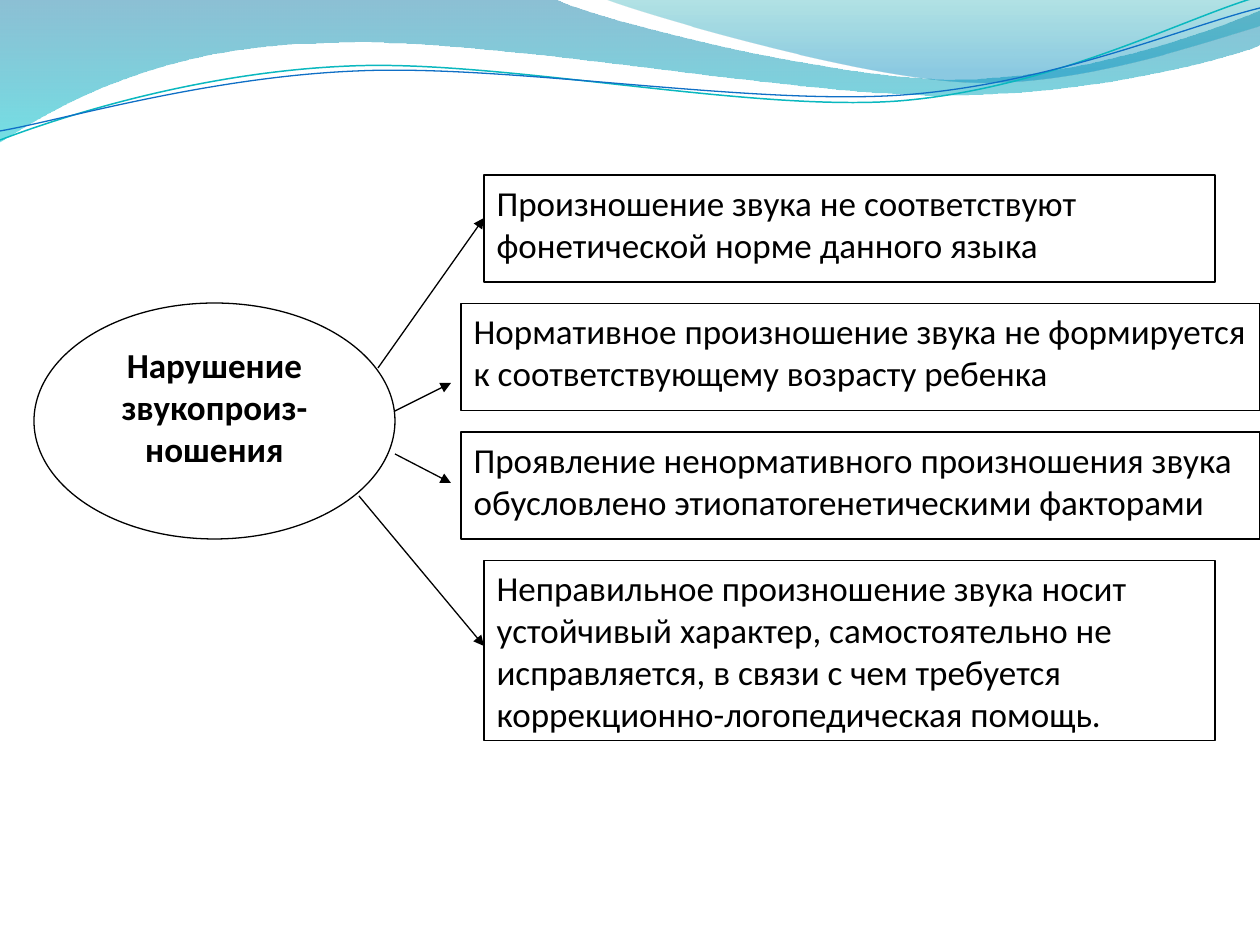
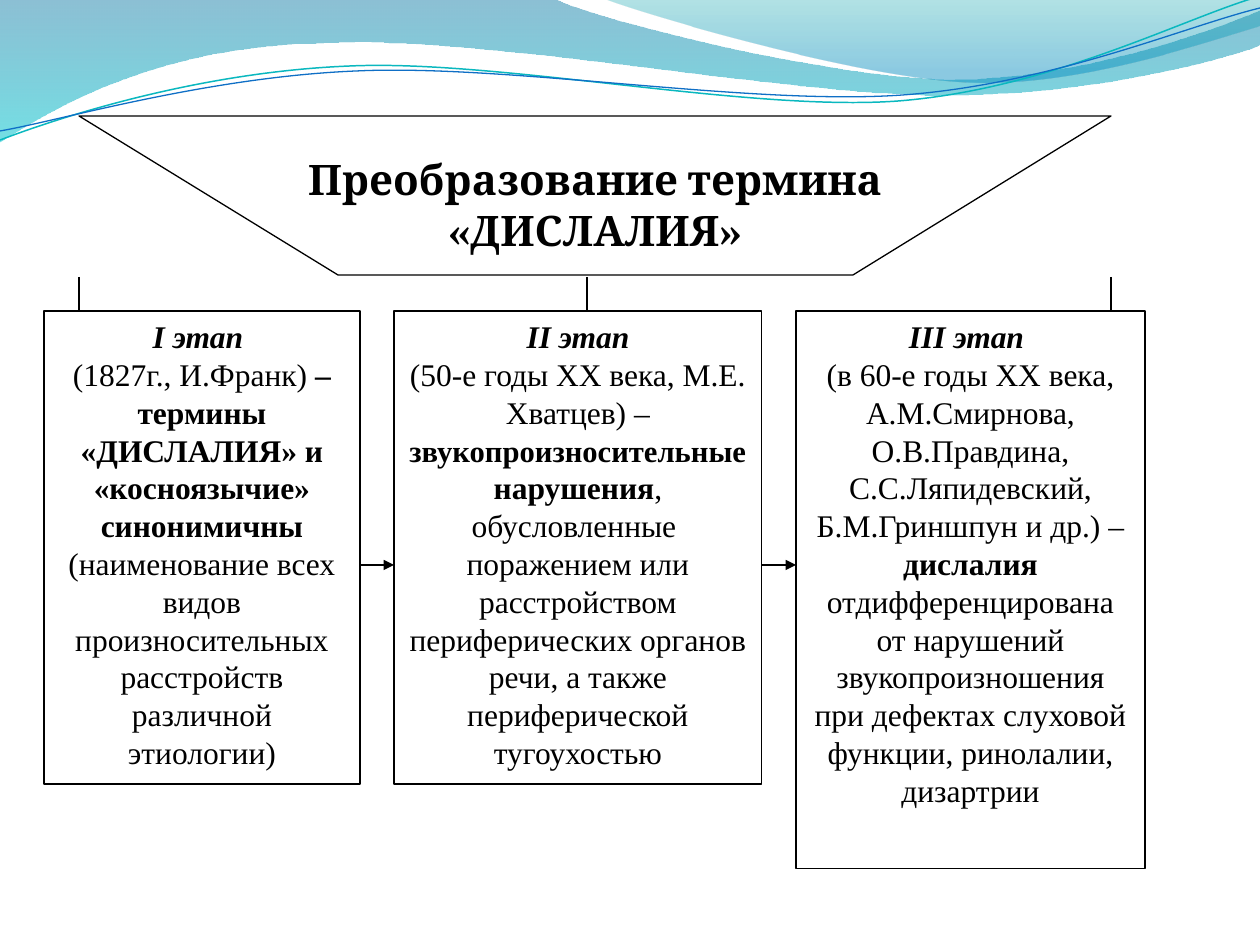
import lxml.etree
import pptx
import pptx.dml.color
import pptx.enum.shapes
import pptx.enum.text
import pptx.oxml.ns
import pptx.util

PX = 7257  # EMU per pixel, 126 pixels to the inch
BLACK = "000000"
WHITE = "FFFFFF"
SHAPES = pptx.enum.shapes.MSO_SHAPE
CENTER = pptx.enum.text.PP_ALIGN.CENTER
LEFT = pptx.enum.text.PP_ALIGN.LEFT
qn = pptx.oxml.ns.qn


def color(hex_string):
    return pptx.dml.color.RGBColor.from_string(hex_string)


def fill_box(shape, paragraphs, font, size, alignment, margins=(12.6, 6.3)):
    """White box with a thin black outline; a run is (text, style[, size])."""
    shape.shadow.inherit = False
    shape.fill.solid()
    shape.fill.fore_color.rgb = color(WHITE)
    shape.line.color.rgb = color(BLACK)
    shape.line.width = pptx.util.Pt(0.75)
    frame = shape.text_frame
    frame.word_wrap = True
    frame.vertical_anchor = pptx.enum.text.MSO_ANCHOR.TOP
    frame.margin_left = frame.margin_right = round(margins[0] * PX)
    frame.margin_top = round(margins[1] * PX)
    frame.margin_bottom = 6 * PX
    for index, runs in enumerate(paragraphs):
        paragraph = frame.paragraphs[0] if index == 0 else frame.add_paragraph()
        paragraph.alignment = alignment
        for text, style, *own_size in runs:
            run = paragraph.add_run()
            run.text = text
            run.font.name = font
            run.font.size = pptx.util.Pt(own_size[0] if own_size else size)
            run.font.bold = "b" in style
            run.font.italic = "i" in style
            run.font.color.rgb = color(BLACK)


presentation = pptx.Presentation()
presentation.slide_width = 1260 * PX
presentation.slide_height = 945 * PX
blank = presentation.slide_layouts[6]
causes_slide = presentation.slides.add_slide(blank)
stages_slide = presentation.slides.add_slide(blank)

# Shared header waves: two numbers make a line, six make a Bezier curve
waves = [
    {"start": (0, 0),
     "parts": [(554, -1), (600, 21, 837, 79, 955, 79), (1075, 79, 1207, 33, 1260, 11),
               (1261, 45), (1239, 55, 1096, 96, 940, 95), (784, 95, 481, 35, 324, 43),
               (163, 45, 58, 105, -1, 142)],
     "stops": [(0, "0074A1", 45), (1, "00C6CF", 55)]},
    {"start": (604, -1),
     "parts": [(641, 14, 859, 78, 969, 82), (1079, 87, 1211, 40, 1260, 26), (1260, 0)],
     "stops": [(0, "00A1A9", 30), (0.8, "008BBF", 45)]},
    {"start": (0, 140),
     "parts": [(60, 117, 199, 72, 349, 66), (498, 59, 747, 112, 898, 101),
               (1050, 89, 1182, 19, 1257, -3)],
     "line": ("0AB8BF", 0.85)},
    {"start": (0, 131),
     "parts": [(59, 121, 207, 77, 357, 71), (508, 64, 752, 106, 903, 95),
               (1053, 84, 1186, 26, 1260, 8)],
     "line": ("0F6FC6", 0.75)},
]

for slide in presentation.slides:
    for wave in waves:
        points = [pair for part in wave["parts"] for pair in zip(part[::2], part[1::2])]
        builder = slide.shapes.build_freeform(*wave["start"], scale=PX)
        builder.add_line_segments(points, close="stops" in wave)
        shape = builder.convert_to_shape()
        shape.shadow.inherit = False
        # Three line points in a row become one Bezier segment
        segments = iter(list(shape._element.spPr.iter(qn("a:lnTo"))))
        for part in wave["parts"]:
            first = next(segments)
            if len(part) == 6:
                first.tag = qn("a:cubicBezTo")
                for extra in (next(segments), next(segments)):
                    first.append(extra[0])
                    extra.getparent().remove(extra)
        if "stops" in wave:
            shape.line.fill.background()
            shape.fill.gradient()
            shape.fill.gradient_angle = 270
            for stop, (position, shade, opacity) in zip(shape.fill.gradient_stops, wave["stops"]):
                stop.position = position
                stop.color.rgb = color(shade)
            # Opacity of each gradient stop
            shades = shape._element.spPr.iter(qn("a:srgbClr"))
            for element, (position, shade, opacity) in zip(shades, wave["stops"]):
                lxml.etree.SubElement(element, qn("a:alpha"), val=str(opacity * 1000))
        else:
            shade, width = wave["line"]
            shape.fill.background()
            shape.line.color.rgb = color(shade)
            shape.line.width = pptx.util.Pt(width)

# Slide 1: the disorder and its four signs
disorder = causes_slide.shapes.add_shape(SHAPES.OVAL, 34 * PX, 303 * PX, 361 * PX, 236 * PX)
fill_box(disorder, [[("Нарушение", "b")], [("звукопроиз-ношения", "b")]], "Calibri", 20, CENTER)

signs = [
    (484, 731, 107, "Произношение звука не соответствуют фонетической норме данного языка"),
    (461, 799, 107, "Нормативное произношение звука не формируется к соответствующему возрасту ребенка"),
    (461, 799, 107, "Проявление ненормативного произношения звука обусловлено "
                    "этиопатогенетическими факторами"),
    (484, 731, 180, "Неправильное произношение звука носит устойчивый характер, самостоятельно не "
                    "исправляется, в связи с чем требуется коррекционно-логопедическая помощь."),
]
SIGN_TOP, SIGN_PITCH = 175, 128.5
for index, (left, width, height, text) in enumerate(signs):
    top = round((SIGN_TOP + index * SIGN_PITCH) * PX)
    sign = causes_slide.shapes.add_shape(SHAPES.RECTANGLE, left * PX, top, width * PX, height * PX)
    fill_box(sign, [[(text, "")]], "Calibri", 20, LEFT)

# Slide 2: three stages of the term
stages = [
    (44, 316, 473, [
        [("I этап ", "bi")],
        [("(1827г., И.Франк) ", ""), ("– термины «ДИСЛАЛИЯ» и «косноязычие» синонимичны", "b")],
        [("(наименование всех видов произносительных расстройств различной этиологии)", "")],
    ]),
    (394, 368, 473, [
        [("II этап", "bi")],
        [("(50-е годы XX века, М.Е. Хватцев) –", "")],
        [("звукопроизносительные", "b", 17.5), (" нарушения", "b"),
         (", обусловленные  поражением или расстройством периферических органов речи, "
          "а также периферической тугоухостью", "")],
    ]),
    (796, 349, 558, [
        [("III этап ", "bi")],
        [("(в 60-е годы XX века, А.М.Смирнова, О.В.Правдина, С.С.Ляпидевский, "
          "Б.М.Гриншпун и др.) –", "")],
        [("дислалия ", "b"),
         ("отдифференцирована от нарушений звукопроизношения при дефектах слуховой функции, "
          "ринолалии, дизартрии", "")],
    ]),
]
for left, width, height, paragraphs in stages:
    stage = stages_slide.shapes.add_shape(
        SHAPES.RECTANGLE, left * PX, 311 * PX, width * PX, height * PX)
    fill_box(stage, paragraphs, "Times New Roman", 18, CENTER)

# Slide 2: title trapezoid, wide side up
builder = stages_slide.shapes.build_freeform(79, 116, scale=PX)
builder.add_line_segments([(1111, 116), (853, 275), (338, 275)], close=True)
title = builder.convert_to_shape()
fill_box(title, [[("Преобразование термина «ДИСЛАЛИЯ»", "b")]], "Cambria", 24, CENTER, (200, 38))

# Lines and arrows of both slides
links = [
    (causes_slide, True, [(378, 368, 484, 218), (359, 496, 484, 646),
                          (395, 411, 451, 383), (395, 454, 451, 483)]),
    (stages_slide, False, [(x, 277, x, 311) for x in (79, 587, 1111)]),
    (stages_slide, True, [(360, 565, 394, 565), (762, 565, 796, 565)]),
]
for slide, has_arrow, ends in links:
    for end_points in ends:
        connector = slide.shapes.add_connector(
            pptx.enum.shapes.MSO_CONNECTOR.STRAIGHT, *[value * PX for value in end_points])
        connector.line.color.rgb = color(BLACK)
        connector.line.width = pptx.util.Pt(0.75)
        if has_arrow:
            lxml.etree.SubElement(connector.line._get_or_add_ln(), qn("a:tailEnd"), type="triangle")
        lxml.etree.SubElement(connector._element.spPr, qn("a:effectLst"))

presentation.save("out.pptx")
